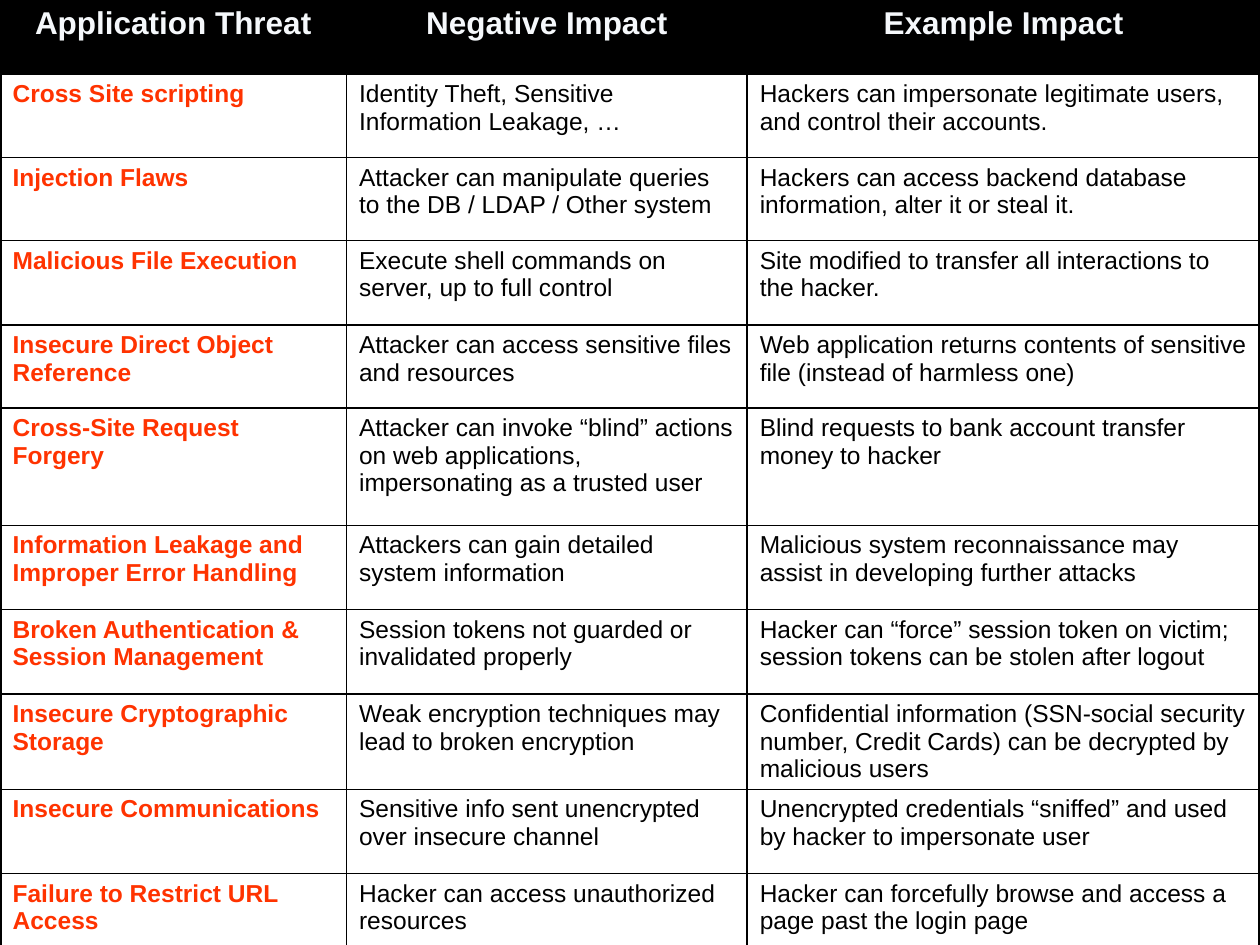
"""Build a one-slide table of application threats, their impact and examples."""
from lxml import etree
from pptx import Presentation
from pptx.dml.color import RGBColor
from pptx.enum.text import PP_ALIGN
from pptx.oxml.ns import qn
from pptx.util import Inches, Pt

LEFT, CENTER = PP_ALIGN.LEFT, PP_ALIGN.CENTER
BLACK = RGBColor(0x00, 0x00, 0x00)
WHITE = RGBColor(0xFF, 0xFF, 0xFF)
PALE = RGBColor(0xF5, 0xF8, 0xFB)
RED = RGBColor(0xFF, 0x33, 0x00)

COL_WIDTHS = [2.75, 3.18, 4.07]
ROW_HEIGHTS = [0.59, 0.66, 0.66, 0.67, 0.66, 0.93] + [0.67] * 5
HEADINGS = ("Application Threat", "Negative Impact", "Example Impact")
THREATS = [
    ("Cross Site scripting",
     "Identity Theft, Sensitive Information Leakage, …",
     "Hackers can impersonate legitimate users, and control their accounts."),
    ("Injection Flaws",
     "Attacker can manipulate queries to the DB / LDAP / Other system",
     "Hackers can access backend database information, alter it or steal it."),
    ("Malicious File Execution",
     "Execute shell commands on server, up to full control",
     "Site modified to transfer all interactions to the hacker."),
    ("Insecure Direct Object Reference",
     "Attacker can access sensitive files and resources",
     "Web application returns contents of sensitive file (instead of harmless one)"),
    ("Cross-Site Request Forgery",
     "Attacker can invoke “blind” actions on web applications, impersonating as a trusted user",
     "Blind requests to bank account transfer money to hacker"),
    ("Information Leakage and Improper Error Handling",
     "Attackers can gain detailed system information",
     "Malicious system reconnaissance may assist in developing further attacks"),
    ("Broken Authentication & Session Management",
     "Session tokens not guarded or invalidated properly",
     "Hacker can “force” session token on victim; session tokens can be stolen after logout"),
    ("Insecure Cryptographic Storage",
     "Weak encryption techniques may lead to broken encryption",
     "Confidential information (SSN-social security number, Credit Cards) "
     "can be decrypted by malicious users"),
    ("Insecure Communications",
     "Sensitive info sent unencrypted over insecure channel",
     "Unencrypted credentials “sniffed” and used by hacker to impersonate user"),
    ("Failure to Restrict URL Access",
     "Hacker can access unauthorized resources",
     "Hacker can forcefully browse and access a page past the login page"),
]


def write_text(tf, text, size=14, color=BLACK, bold=False, align=LEFT, font="Arial"):
    """Put one formatted paragraph into a text frame."""
    p = tf.paragraphs[0]
    p.alignment = align
    r = p.add_run()
    r.text = text
    r.font.name = font
    r.font.size = Pt(size)
    r.font.bold = bold
    r.font.color.rgb = color


class Deck:
    """Hold the table style and the current slide."""

    inner, outer, line = 1, 2.25, BLACK
    header = {"size": 18, "color": PALE, "bold": True, "align": CENTER}
    threat = {"color": RED, "bold": True}

    def __init__(self, width, height):
        """Start a presentation of the given size with one blank slide."""
        self.prs = Presentation()
        self.prs.slide_width, self.prs.slide_height = Inches(width), Inches(height)
        self.s = self.prs.slides.add_slide(self.prs.slide_layouts[6])

    def borders(self, cell, widths):
        """Draw the cell edges, given their widths in points by side."""
        tc_pr = cell._tc.get_or_add_tcPr()
        for i, (side, width) in enumerate(widths.items()):
            ln = etree.Element(qn(f"a:ln{side}"), w=str(Pt(width)))
            fill = etree.SubElement(ln, qn("a:solidFill"))
            etree.SubElement(fill, qn("a:srgbClr"), val=str(self.line))
            tc_pr.insert(i, ln)

    def table(self, rows, col_widths, row_heights):
        """Add a table with a dark header row and a highlighted first column."""
        n_rows, n_cols = len(rows), len(col_widths)
        tbl = self.s.shapes.add_table(
            n_rows, n_cols, Inches(0), Inches(0),
            Inches(sum(col_widths)), Inches(sum(row_heights))).table
        for col, width in zip(tbl.columns, col_widths):
            col.width = Inches(width)
        for row, height in zip(tbl.rows, row_heights):
            row.height = Inches(height)
        for i, texts in enumerate(rows):
            for j, text in enumerate(texts):
                cell = tbl.cell(i, j)
                cell.fill.solid()
                cell.fill.fore_color.rgb = WHITE if i else BLACK
                style = self.header if i == 0 else self.threat if j == 0 else {}
                write_text(cell.text_frame, text, **style)
                edges = {"L": j == 0, "R": j == n_cols - 1,
                         "T": i == 0, "B": i == n_rows - 1}
                self.borders(cell, {side: self.outer if edge else self.inner
                                    for side, edge in edges.items()})


def main():
    """Build and save the slide."""
    deck = Deck(10, 7.5)
    deck.table([HEADINGS] + THREATS, COL_WIDTHS, ROW_HEIGHTS)
    deck.prs.save("out.pptx")


if __name__ == "__main__":
    main()
